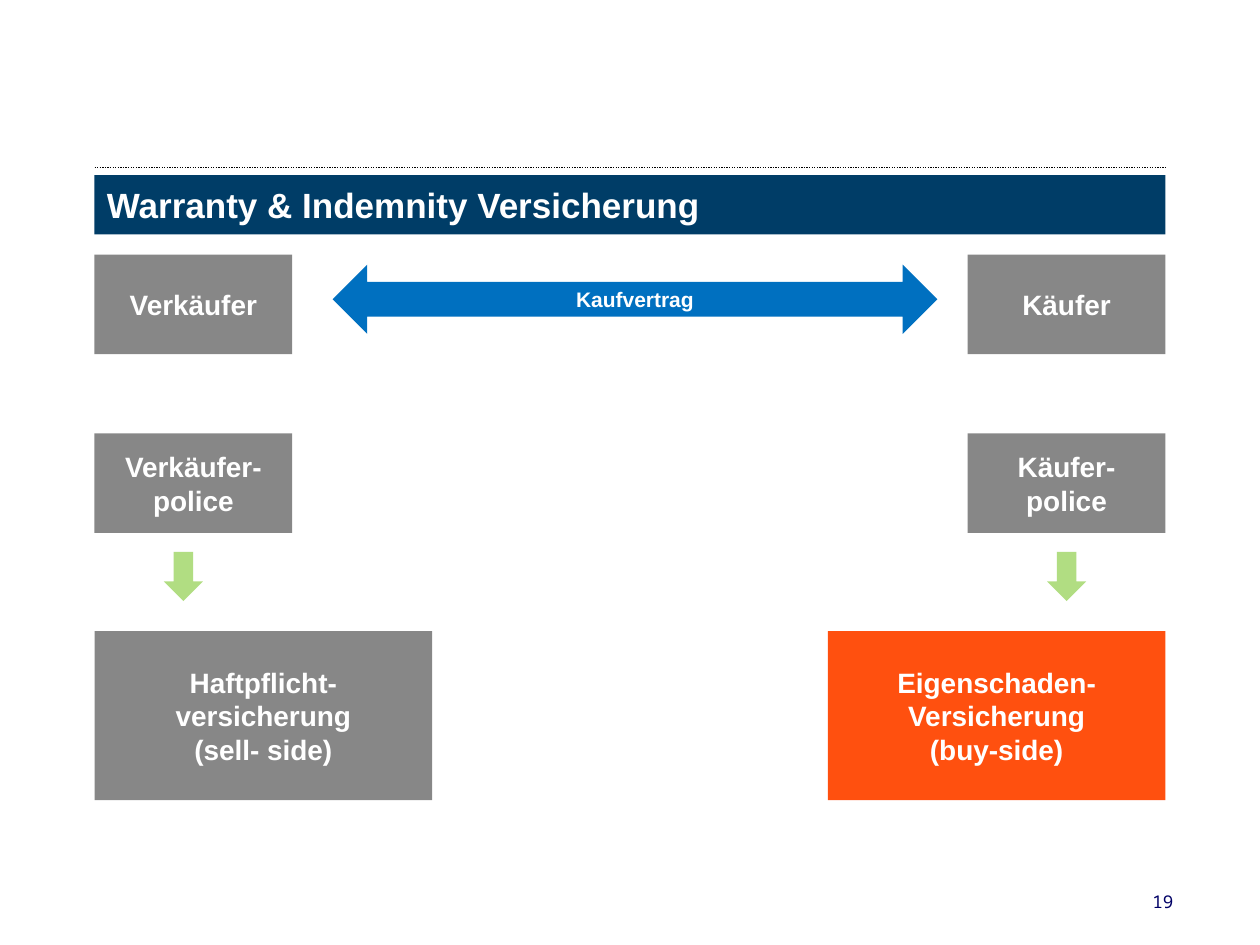
from dataclasses import dataclass

from lxml import etree
from pptx import Presentation
from pptx.dml.color import RGBColor
from pptx.enum.dml import MSO_LINE
from pptx.enum.shapes import MSO_CONNECTOR, MSO_SHAPE
from pptx.enum.text import MSO_ANCHOR, PP_ALIGN
from pptx.oxml.ns import qn
from pptx.util import Inches, Pt

RECTANGLE = MSO_SHAPE.RECTANGLE
DOWN_ARROW = MSO_SHAPE.DOWN_ARROW
DOUBLE_ARROW = MSO_SHAPE.LEFT_RIGHT_ARROW
STRAIGHT = MSO_CONNECTOR.STRAIGHT
DOTTED = MSO_LINE.ROUND_DOT
MIDDLE, TOP = MSO_ANCHOR.MIDDLE, MSO_ANCHOR.TOP
LEFT, CENTER, RIGHT = PP_ALIGN.LEFT, PP_ALIGN.CENTER, PP_ALIGN.RIGHT

WHITE, BLACK, NAVY = "FFFFFF", "000000", "003D67"
GRAY, ORANGE, BLUE, GREEN = "808080", "FF4600", "0070C0", "92D050"
MARGIN_LEFT, MARGIN_RIGHT = 0.75, 9.25
PARTY_WIDTH, PARTY_HEIGHT = 1.57, 0.79
COVER_WIDTH, COVER_HEIGHT = 2.68, 1.34
PARTY_TOP, POLICY_TOP, COVER_TOP = 2.02, 3.44, 5.01


@dataclass(frozen=True)
class Block:
    left: float
    top: float
    width: float
    height: float
    fill: str
    lines: tuple[str, ...] = ()
    preset: int = RECTANGLE
    opacity: int = 100
    size: int = 16
    align: int = CENTER


@dataclass(frozen=True)
class Side:
    party: str
    policy: tuple[str, ...]
    cover: tuple[str, ...]
    cover_fill: str
    party_left: float
    cover_left: float
    arrow_left: float


def color(value: str) -> RGBColor:
    return RGBColor.from_string(value)


def write(frame, lines, size, tint, align, anchor, bold=True, font="Arial") -> None:
    frame.word_wrap = True
    frame.vertical_anchor = anchor
    for index, line in enumerate(lines):
        paragraph = frame.add_paragraph() if index else frame.paragraphs[0]
        paragraph.alignment = align
        run = paragraph.add_run()
        run.text = line
        run.font.name = font
        run.font.size = Pt(size)
        run.font.bold = bold
        run.font.color.rgb = color(tint)


def draw_block(slide, block: Block) -> None:
    shape = slide.shapes.add_shape(
        block.preset, Inches(block.left), Inches(block.top),
        Inches(block.width), Inches(block.height))
    shape.shadow.inherit = False
    shape.line.fill.background()
    shape.fill.solid()
    shape.fill.fore_color.rgb = color(block.fill)
    if block.opacity < 100:
        tint = shape.fill._xPr.find(qn("a:solidFill"))[0]
        etree.SubElement(tint, qn("a:alpha"), val=str(block.opacity * 1000))
    write(shape.text_frame, block.lines, block.size, WHITE, block.align, MIDDLE)


def draw_side(slide, side: Side) -> None:
    for top, lines in ((PARTY_TOP, (side.party,)), (POLICY_TOP, side.policy)):
        draw_block(slide, Block(side.party_left, top, PARTY_WIDTH, PARTY_HEIGHT,
                                GRAY, lines, opacity=94))
    draw_block(slide, Block(side.arrow_left, 4.38, 0.31, 0.39, GREEN,
                            preset=DOWN_ARROW, opacity=71))
    draw_block(slide, Block(side.cover_left, COVER_TOP, COVER_WIDTH, COVER_HEIGHT,
                            side.cover_fill, side.cover, opacity=94))


def draw_rule(slide) -> None:
    rule = slide.shapes.add_connector(
        STRAIGHT, Inches(MARGIN_LEFT), Inches(1.33), Inches(MARGIN_RIGHT), Inches(1.33))
    rule.line.color.rgb = color(BLACK)
    rule.line.width = Pt(0.75)
    rule.line.dash_style = DOTTED
    etree.SubElement(rule._element.spPr, qn("a:effectLst"))


def draw_page_number(slide) -> None:
    number = slide.shapes.add_textbox(Inches(8.62), Inches(7.02), Inches(0.79), Inches(0.5))
    write(number.text_frame, ("19",), 10, "000066", RIGHT, TOP, False, "Noto Sans Mono")


def main() -> None:
    presentation = Presentation()
    presentation.slide_width = Inches(10)
    presentation.slide_height = Inches(7.5)
    slide = presentation.slides.add_slide(presentation.slide_layouts[6])

    seller = Side("Verkäufer", ("Verkäufer-police",),
                  ("Haftpflicht-versicherung", "(sell- side)"), GRAY,
                  MARGIN_LEFT, MARGIN_LEFT, 1.3)
    buyer = Side("Käufer", ("Käufer-", "police"),
                 ("Eigenschaden-Versicherung", "(buy-side)"), ORANGE,
                 MARGIN_RIGHT - PARTY_WIDTH, MARGIN_RIGHT - COVER_WIDTH, 8.31)

    draw_rule(slide)
    draw_page_number(slide)
    draw_block(slide, Block(MARGIN_LEFT, 1.39, MARGIN_RIGHT - MARGIN_LEFT, 0.47, NAVY,
                            ("Warranty & Indemnity Versicherung",), size=20, align=LEFT))
    draw_block(slide, Block(2.64, 2.1, 4.8, 0.55, BLUE, ("Kaufvertrag",),
                            preset=DOUBLE_ARROW, size=12))
    for side in (seller, buyer):
        draw_side(slide, side)

    presentation.save("out.pptx")


if __name__ == "__main__":
    main()
